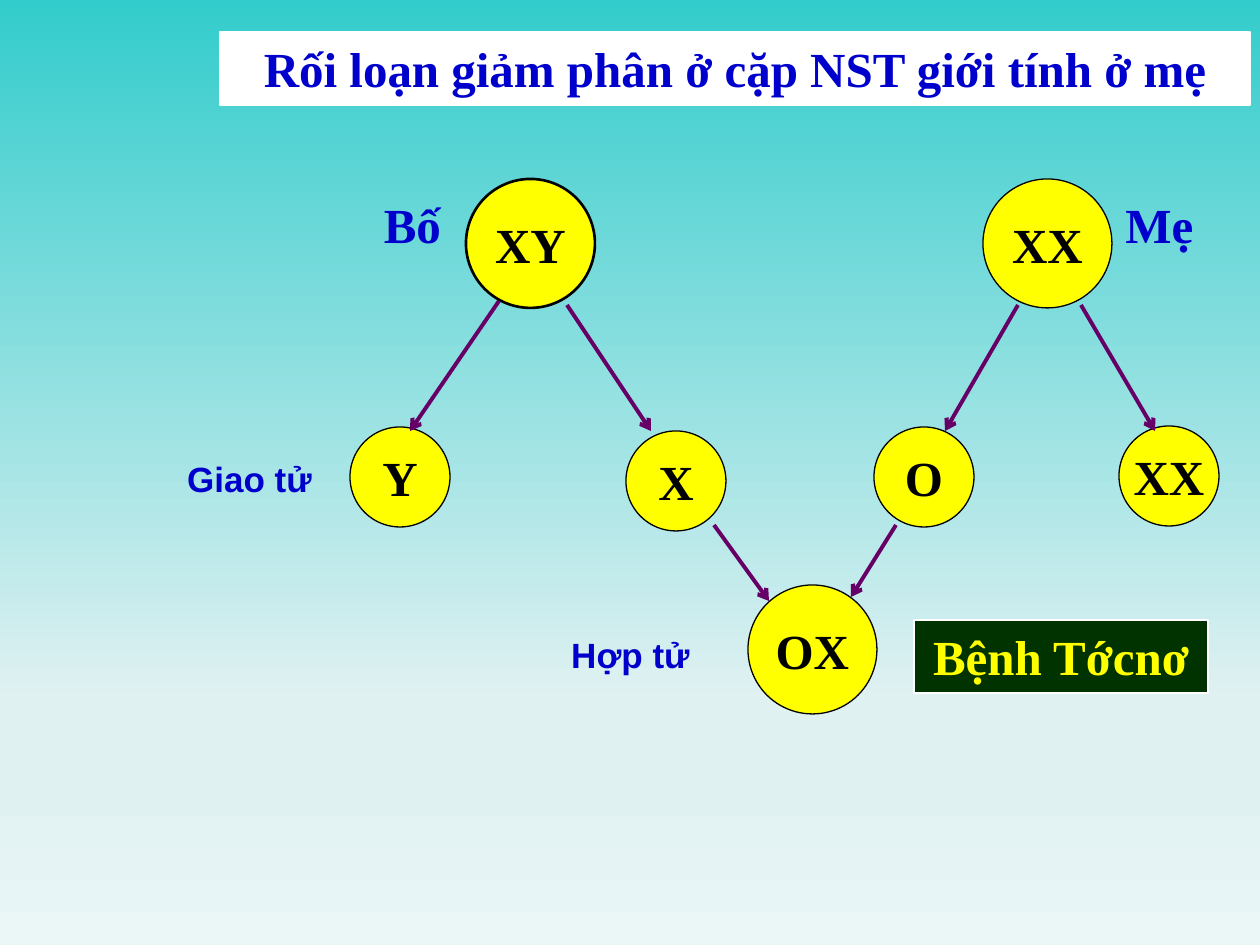
"""Builds a slide on faulty meiosis of the mother's sex chromosomes."""
from copy import deepcopy
from dataclasses import dataclass

from lxml import etree
from pptx import Presentation
from pptx.dml.color import RGBColor
from pptx.enum.shapes import MSO_CONNECTOR, MSO_SHAPE
from pptx.enum.text import MSO_ANCHOR, MSO_AUTO_SIZE, PP_ALIGN
from pptx.oxml.ns import qn
from pptx.util import Emu, Pt

OVAL = MSO_SHAPE.OVAL
RECTANGLE = MSO_SHAPE.RECTANGLE
STRAIGHT = MSO_CONNECTOR.STRAIGHT
MIDDLE = MSO_ANCHOR.MIDDLE
TOP = MSO_ANCHOR.TOP
GROW = MSO_AUTO_SIZE.SHAPE_TO_FIT_TEXT
LEFT = PP_ALIGN.LEFT
CENTER = PP_ALIGN.CENTER
SCALE = 914400 / 126


@dataclass(frozen=True)
class Theme:
    yellow: str = "FFFF00"
    black: str = "000000"
    blue: str = "0000CC"
    purple: str = "660066"
    green: str = "003300"
    white: str = "FFFFFF"
    backdrop: tuple = ((0, "33CCCC"), (0.74, "E0F1F2"), (0.83, "E0F1F2"), (1, "EBF6F7"))
    serif: str = "Times New Roman"
    sans: str = "Arial"
    large: int = 28
    small: int = 20
    thin: float = 0.75
    medium: float = 1.5
    thick: float = 2.25


def px(value):
    return Emu(round(value * SCALE))


def rgb(color):
    return RGBColor.from_string(color)


class SlideBuilder:
    def __init__(self, page, theme):
        self.page = page
        self.theme = theme

    def background(self):
        fill = self.page.background.fill
        fill.gradient()
        fill.gradient_angle = 270
        stop_list = self.page.element.find(".//" + qn("a:gsLst"))
        for _ in range(len(self.theme.backdrop) - len(stop_list)):
            stop_list.append(deepcopy(stop_list[0]))
        for stop, (position, color) in zip(fill.gradient_stops, self.theme.backdrop):
            stop.position = position
            stop.color.rgb = rgb(color)

    def set_text(self, shape, text, color, font, size, align=CENTER):
        para = shape.text_frame.paragraphs[0]
        para.text = text
        para.alignment = align
        para.font.name = font
        para.font.size = Pt(size)
        para.font.bold = True
        para.font.color.rgb = rgb(color)

    def shape(self, kind, bounds, fill, line, width):
        shape = self.page.shapes.add_shape(kind, *map(px, bounds))
        shape.shadow.inherit = False
        shape.fill.solid()
        shape.fill.fore_color.rgb = rgb(fill)
        shape.line.color.rgb = rgb(line)
        shape.line.width = Pt(width)
        return shape

    def circle(self, text, left, top, size, width):
        theme = self.theme
        bounds = (left, top, size, size)
        circle = self.shape(OVAL, bounds, theme.yellow, theme.black, width)
        circle.text_frame.word_wrap = False
        circle.text_frame.vertical_anchor = MIDDLE
        self.set_text(circle, text, theme.black, theme.serif, theme.large)

    def banner(self, text, bounds, fill, color):
        theme = self.theme
        banner = self.shape(RECTANGLE, bounds, fill, theme.white, theme.thin)
        banner.text_frame.word_wrap = True
        banner.text_frame.auto_size = GROW
        banner.text_frame.vertical_anchor = TOP
        self.set_text(banner, text, color, theme.serif, theme.large)

    def label(self, text, bounds, font, size, align=CENTER):
        box = self.page.shapes.add_textbox(*map(px, bounds))
        box.text_frame.word_wrap = True
        box.text_frame.auto_size = GROW
        self.set_text(box, text, self.theme.blue, font, size, align)

    def arrow(self, *points):
        arrow = self.page.shapes.add_connector(STRAIGHT, *map(px, points))
        arrow.line.color.rgb = rgb(self.theme.purple)
        arrow.line.width = Pt(self.theme.thick)
        properties = arrow.element.spPr
        line = properties.find(qn("a:ln"))
        etree.SubElement(line, qn("a:tailEnd"), type="arrow")
        etree.SubElement(properties, qn("a:effectLst"))


def main():
    theme = Theme()
    deck = Presentation()
    deck.slide_width, deck.slide_height = px(1260), px(945)
    builder = SlideBuilder(deck.slides.add_slide(deck.slide_layouts[6]), theme)
    builder.background()

    gamete, cell = 100, 129
    for text, left, top, size, width in (
        ("Y", 350, 427, gamete, theme.thin),
        ("X", 626, 431, gamete, theme.thin),
        ("OX", 748, 585, cell, theme.thin),
        ("O", 874, 427, gamete, theme.thin),
        ("XX", 1119, 426, gamete, theme.thin),
        ("XX", 983, 179, cell, theme.thin),
        ("XY", 466, 179, cell, theme.medium),
    ):
        builder.circle(text, left, top, size, width)

    for points in (
        (499, 301, 410, 431),
        (567, 305, 651, 431),
        (1018, 305, 945, 431),
        (1081, 305, 1155, 431),
        (714, 525, 769, 601),
        (896, 525, 851, 597),
    ):
        builder.arrow(*points)

    builder.label("Bố", (368, 188, 89, 72), theme.serif, theme.large)
    builder.label("Mẹ", (1113, 188, 118, 72), theme.serif, theme.large, LEFT)
    builder.label("Giao tử", (168, 451, 163, 54), theme.sans, theme.small)
    builder.label("Hợp tử", (557, 627, 147, 54), theme.sans, theme.small)
    builder.banner("Bệnh Tớcnơ", (914, 620, 294, 73), theme.green, theme.yellow)
    builder.banner("Rối loạn giảm phân ở cặp NST giới tính ở mẹ",
                   (220, 32, 1030, 73), theme.white, theme.blue)
    deck.save("out.pptx")


if __name__ == "__main__":
    main()
